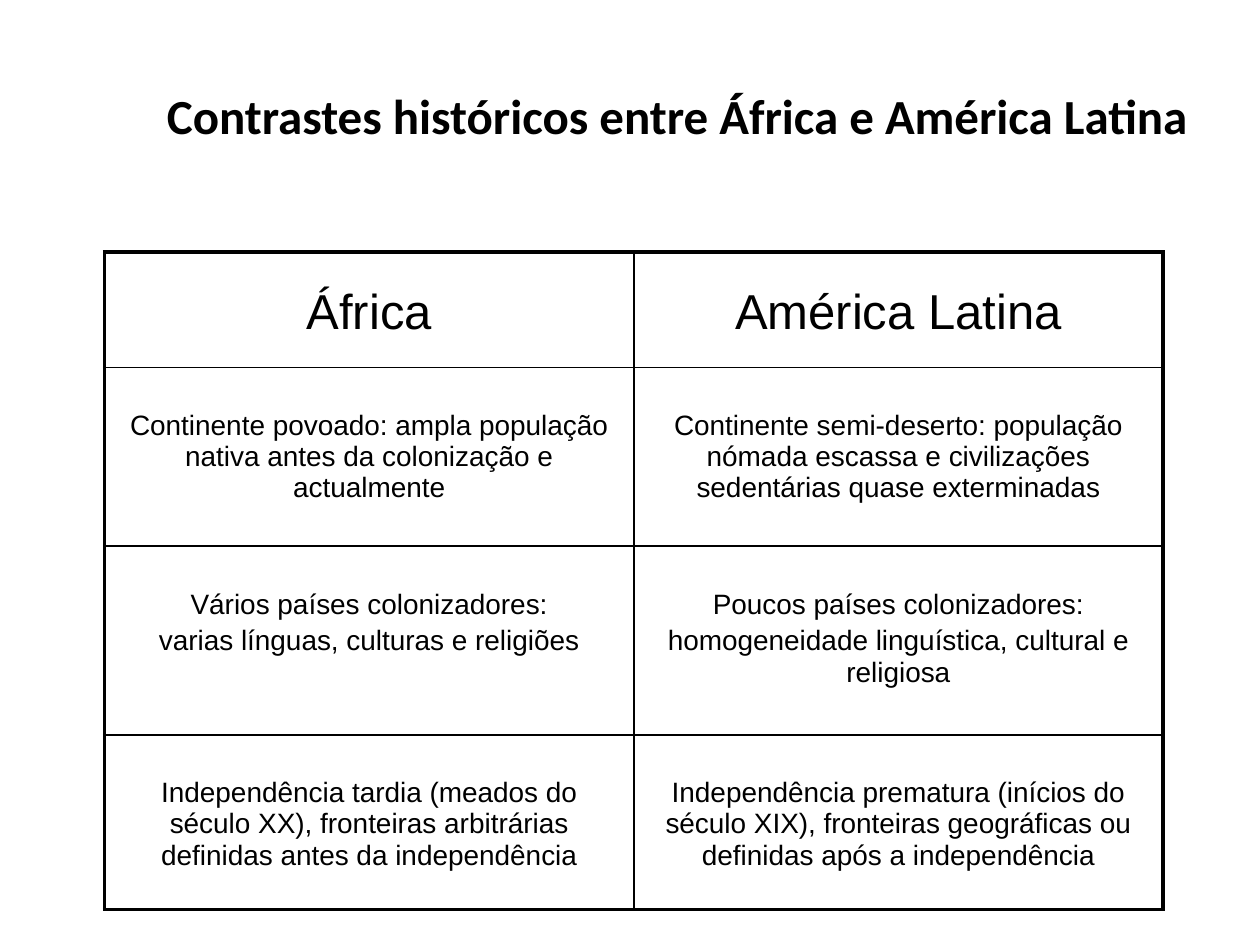
import lxml.etree
import pptx
import pptx.dml.color
import pptx.enum.text
import pptx.oxml.ns
import pptx.util

Inches = pptx.util.Inches
Pt = pptx.util.Pt
INK = "000000"
HEADS = ["África", "América Latina"]
ROWS = [
    [
        ["Continente povoado: ampla população nativa antes da colonização e actualmente"],
        ["Continente semi-deserto: população nómada escassa e civilizações sedentárias quase exterminadas"],
    ],
    [
        ["Vários países colonizadores:", "varias línguas, culturas e religiões"],
        ["Poucos países colonizadores:", "homogeneidade linguística, cultural e religiosa"],
    ],
    [
        ["Independência tardia (meados do século XX), fronteiras arbitrárias definidas antes da independência"],
        ["Independência prematura (inícios do século XIX), fronteiras geográficas ou definidas após a independência"],
    ],
]
TALL = [0.92, 1.42, 1.5, 1.39]


def tint(color, ink):
    color.rgb = pptx.dml.color.RGBColor.from_string(ink)


def add_run(para, text, size, face, bold=False):
    para.alignment = pptx.enum.text.PP_ALIGN.CENTER
    run = para.add_run()
    run.text = text
    run.font.size = Pt(size)
    run.font.name = face
    run.font.bold = bold
    tint(run.font.color, INK)


def add_edge(cell, side, width):
    name = pptx.oxml.ns.qn("a:ln" + side)
    line = lxml.etree.SubElement(cell._tc.get_or_add_tcPr(), name, w=str(Pt(width)))
    fill = lxml.etree.SubElement(line, pptx.oxml.ns.qn("a:solidFill"))
    lxml.etree.SubElement(fill, pptx.oxml.ns.qn("a:srgbClr"), val=INK)


def fill_cell(cell, lines, size, top, outer):
    cell.margin_top = Inches(top)
    for side in "LRTB":
        add_edge(cell, side, 2.25 if side in outer else 1)
    cell.fill.background()
    frame = cell.text_frame
    for i, text in enumerate(lines):
        para = frame.add_paragraph() if i else frame.paragraphs[0]
        if i:
            para.space_before = Pt(size * 0.2)
        add_run(para, text, size, "Arial")


def put_title(slide, left, top, width, height):
    title = slide.shapes.title
    title.left, title.top = Inches(left), Inches(top)
    title.width, title.height = Inches(width), Inches(height)
    frame = title.text_frame
    frame.vertical_anchor = pptx.enum.text.MSO_ANCHOR.MIDDLE
    add_run(frame.paragraphs[0], "Contrastes históricos entre África e América Latina", 28, "Calibri", True)


def put_table(slide, left, top, width, height):
    cells = [[[head] for head in HEADS]] + ROWS
    last = len(cells) - 1
    box = [Inches(n) for n in (left, top, width, height)]
    table = slide.shapes.add_table(len(cells), len(HEADS), *box).table
    table.first_row = False
    table.horz_banding = False
    for r, row in enumerate(cells):
        table.rows[r].height = Inches(height * TALL[r] / sum(TALL))
        size, pad = (16, 0.34) if r else (28, 0.26)
        for c, lines in enumerate(row):
            outer = "LR"[c] + ("T" if r == 0 else "B" if r == last else "")
            fill_cell(table.cell(r, c), lines, size, pad, outer)


def main():
    deck = pptx.Presentation()
    deck.slide_width, deck.slide_height = Inches(10), Inches(7.5)
    slide = deck.slides.add_slide(deck.slide_layouts[5])
    put_table(slide, 0.83, 2, 8.4, 5.22)
    put_title(slide, 0.75, 0.25, 9.25, 1.33)
    deck.save("out.pptx")


if __name__ == "__main__":
    main()
